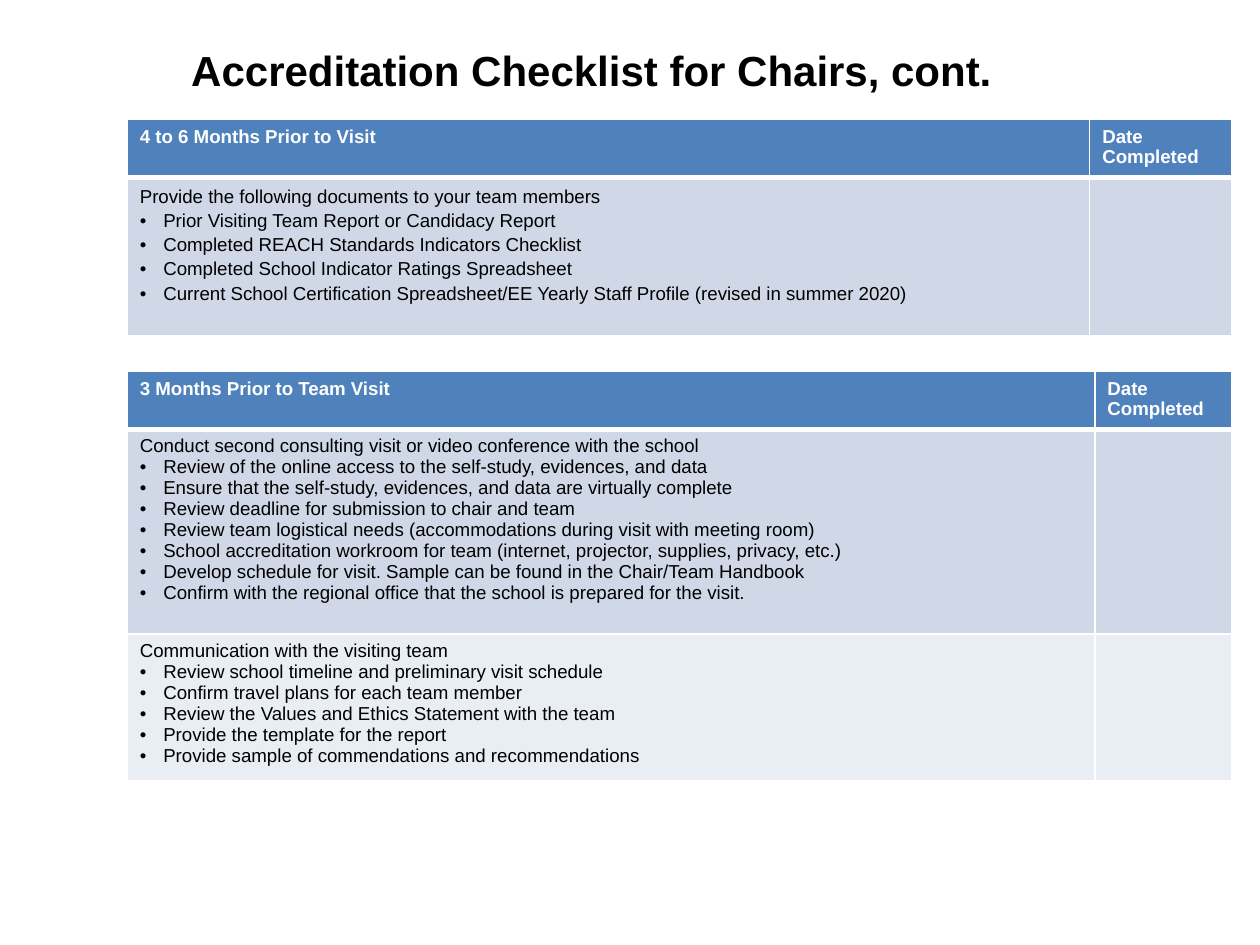
"""Build the accreditation checklist slide with its two dated task tables."""
import pptx
import pptx.dml.color
import pptx.oxml
import pptx.oxml.ns
import pptx.util

Pt = pptx.util.Pt

TITLE = "Accreditation Checklist for Chairs, cont."
DATE_HEADING = "Date Completed"
CHECKLISTS = [
    {
        "heading": "3 Months Prior to Team Visit",
        "top": 212.4, "date_width": 78.5, "line_spacing": None,
        "tasks": [
            (117, "Conduct second consulting visit or video conference with the school", [
                "Review of the online access to the self-study, evidences, and data",
                "Ensure that the self-study, evidences, and data are virtually complete",
                "Review deadline for submission to chair and team",
                "Review team logistical needs (accommodations during visit with meeting room)",
                "School accreditation workroom for team (internet, projector, supplies, privacy, etc.)",
                "Develop schedule for visit. Sample can be found in the Chair/Team Handbook",
                "Confirm with the regional office that the school is prepared for the visit.",
            ]),
            (80.8, "Communication with the visiting team", [
                "Review school timeline and preliminary visit schedule",
                "Confirm travel plans for each team member",
                "Review the Values and Ethics Statement with the team",
                "Provide the template for the report",
                "Provide sample of commendations and recommendations",
            ]),
        ],
    },
    {
        "heading": "4 to 6 Months Prior to Visit",
        "top": 68.4, "date_width": 81.4, "line_spacing": 1.15,
        "tasks": [
            (90.6, "Provide the following documents to your team members", [
                "Prior Visiting Team Report or Candidacy Report",
                "Completed REACH Standards Indicators Checklist",
                "Completed School Indicator Ratings Spreadsheet",
                "Current School Certification Spreadsheet/EE Yearly Staff Profile (revised in summer 2020)",
            ]),
        ],
    },
]
TABLE_LEFT, TABLE_WIDTH, HEADING_HEIGHT = 72.7, 631.4, 31.8
BULLET_INDENT = 13.4
TASK_FILLS = ["D0D8E8", "E9EDF4"]


def color(hex_string):
    """Turn a hex string into a colour."""
    return pptx.dml.color.RGBColor.from_string(hex_string)


def add_text(frame, text, size=10.7, ink="000000", bold=False, bullet=False, line_spacing=None):
    """Write one paragraph, using the first one while it is still empty."""
    paragraph = frame.paragraphs[0]
    if paragraph.runs:
        paragraph = frame.add_paragraph()
    if bullet:
        properties = paragraph._p.get_or_add_pPr()
        properties.set("marL", str(Pt(BULLET_INDENT)))
        properties.set("indent", str(-Pt(BULLET_INDENT)))
        properties.append(pptx.oxml.parse_xml(
            f'<a:buFont {pptx.oxml.ns.nsdecls("a")} typeface="Arial"/>'))
        properties.append(pptx.oxml.parse_xml(
            f'<a:buChar {pptx.oxml.ns.nsdecls("a")} char="•"/>'))
    if line_spacing:
        paragraph.line_spacing = line_spacing
    run = paragraph.add_run()
    run.text = text
    run.font.name = "Arial"
    run.font.size = Pt(size)
    run.font.bold = bold
    run.font.color.rgb = color(ink)


def style_cell(cell, fill, top=1, bottom=1):
    """Fill a cell and give it white borders."""
    cell.fill.solid()
    cell.fill.fore_color.rgb = color(fill)
    widths = {"lnL": 1, "lnR": 1, "lnT": top, "lnB": bottom}
    for position, (side, width) in enumerate(widths.items()):
        cell._tc.get_or_add_tcPr().insert(position, pptx.oxml.parse_xml(
            f'<a:{side} {pptx.oxml.ns.nsdecls("a")} w="{Pt(width)}"><a:solidFill>'
            f'<a:srgbClr val="FFFFFF"/></a:solidFill></a:{side}>'))


def add_checklist(slide, checklist):
    """Add one table with a heading row and a row for each task."""
    tasks = checklist["tasks"]
    heights = [HEADING_HEIGHT] + [height for height, _, _ in tasks]
    table = slide.shapes.add_table(
        len(heights), 2, Pt(TABLE_LEFT), Pt(checklist["top"]),
        Pt(TABLE_WIDTH), Pt(sum(heights))).table
    table.columns[0].width = Pt(TABLE_WIDTH - checklist["date_width"])
    table.columns[1].width = Pt(checklist["date_width"])
    for row, height in zip(table.rows, heights):
        row.height = Pt(height)
    for column, heading in enumerate([checklist["heading"], DATE_HEADING]):
        cell = table.cell(0, column)
        style_cell(cell, "4F81BD", bottom=3)
        add_text(cell.text_frame, heading, ink="FFFFFF", bold=True)
    for number, (_, task, steps) in enumerate(tasks, start=1):
        for column in range(2):
            style_cell(table.cell(number, column), TASK_FILLS[number - 1],
                       top=3 if number == 1 else 1)
        frame = table.cell(number, 0).text_frame
        add_text(frame, task, line_spacing=checklist["line_spacing"])
        for step in steps:
            add_text(frame, step, bullet=True, line_spacing=checklist["line_spacing"])


def main():
    """Assemble and save the slide."""
    deck = pptx.Presentation()
    deck.slide_width, deck.slide_height = Pt(720), Pt(540)
    slide = deck.slides.add_slide(deck.slide_layouts[6])
    title = slide.shapes.add_textbox(Pt(102.2), Pt(19.4), Pt(581.8), Pt(49)).text_frame
    title.word_wrap = True
    title.margin_top = Pt(6.3)
    add_text(title, TITLE, size=24, bold=True)
    for checklist in CHECKLISTS:
        add_checklist(slide, checklist)
    deck.save("out.pptx")


if __name__ == "__main__":
    main()
